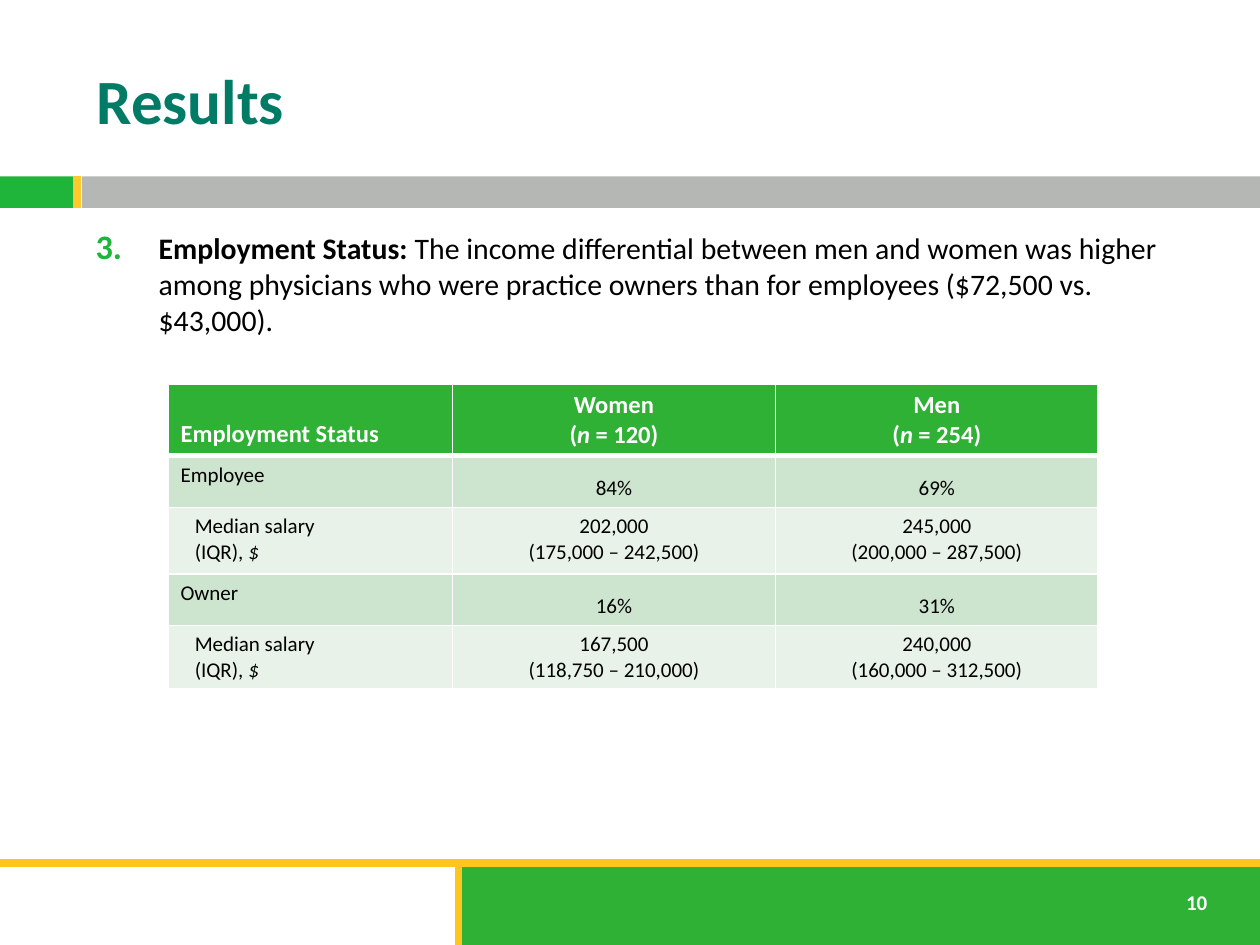
from lxml import etree
from pptx import Presentation
from pptx.dml.color import RGBColor
from pptx.enum.shapes import MSO_CONNECTOR, MSO_SHAPE
from pptx.enum.text import MSO_ANCHOR, PP_ALIGN
from pptx.oxml.ns import qn
from pptx.util import Pt

TOP, MIDDLE, BOTTOM = MSO_ANCHOR.TOP, MSO_ANCHOR.MIDDLE, MSO_ANCHOR.BOTTOM
LEFT, CENTER, RIGHT = PP_ALIGN.LEFT, PP_ALIGN.CENTER, PP_ALIGN.RIGHT
GREEN, WHITE, BLACK = "2EB135", "FFFFFF", "000000"


def paint(target, color):
    target.solid()
    target.fore_color.rgb = RGBColor.from_string(color)


def write(para, text, size=12, color=BLACK, bold=False, italic=False, align=LEFT):
    para.alignment = align
    span = para.add_run()
    span.text = text
    font = span.font
    font.name, font.size, font.bold, font.italic = "Calibri", Pt(size), bold, italic
    paint(font.fill, color)


deck = Presentation()
deck.slide_width, deck.slide_height = Pt(720), Pt(540)
page = deck.slides.add_slide(deck.slide_layouts[5])
paint(page.background.fill, WHITE)

bands = [
    (0, 100.8, 41.8, 18, "1EB53A"),
    (46.8, 100.8, 673.2, 18, "B5B7B4"),
    (260.6, 492.5, 459.4, 47.5, GREEN),
]
for left, top, width, height, color in bands:
    band = page.shapes.add_shape(MSO_SHAPE.RECTANGLE, Pt(left), Pt(top), Pt(width), Pt(height))
    band.shadow.inherit = False
    paint(band.fill, color)
    band.line.fill.background()

rules = [
    (0, 493, 720, 493, "FFC61E"),
    (262, 494, 262, 540, "FFC61E"),
    (44.2, 100.8, 44.2, 118.8, "FFC82E"),
]
for x1, y1, x2, y2, color in rules:
    rule = page.shapes.add_connector(MSO_CONNECTOR.STRAIGHT, Pt(x1), Pt(y1), Pt(x2), Pt(y2))
    rule.line.width = Pt(4.5)
    paint(rule.line.fill, color)
    etree.SubElement(rule._element.spPr, qn("a:effectLst"))

title = page.shapes.title
title.left, title.top, title.width, title.height = Pt(48), Pt(18), Pt(642), Pt(78)
title.text_frame.vertical_anchor = MIDDLE
write(title.text_frame.paragraphs[0], "Results", size=36, color="007C66", bold=True)

number_box = page.shapes.add_textbox(Pt(668), Pt(505), Pt(29), Pt(22))
number_box.text_frame.word_wrap = False
write(number_box.text_frame.paragraphs[0], "10", color=WHITE, bold=True, align=RIGHT)

finding_box = page.shapes.add_textbox(Pt(47.6), Pt(128), Pt(642), Pt(104))
finding_box.text_frame.word_wrap = True
finding = finding_box.text_frame.paragraphs[0]
properties = finding._p.get_or_add_pPr()
properties.set("marL", str(Pt(36)))
properties.set("indent", str(-Pt(36)))
bullet_color = etree.SubElement(properties, qn("a:buClr"))
etree.SubElement(bullet_color, qn("a:srgbClr"), val="1EB53A")
etree.SubElement(properties, qn("a:buSzPct"), val="115000")
etree.SubElement(properties, qn("a:buFont"), typeface="Calibri")
etree.SubElement(properties, qn("a:buAutoNum"), type="arabicPeriod", startAt="3")
write(finding, "Employment Status: ", size=17, bold=True)
write(finding, "The income differential between men and women was higher among physicians "
      "who were practice owners than for employees ($72,500 vs. $43,000).", size=17)

rows = [
    ["Employment Status", "Women\n(|n| = 120)", "Men\n(|n| = 254)"],
    ["Employee", "84%", "69%"],
    ["Median salary\n(IQR), |$", "202,000\n(175,000 – 242,500)", "245,000\n(200,000 – 287,500)"],
    ["Owner", "16%", "31%"],
    ["Median salary\n(IQR), |$", "167,500\n(118,750 – 210,000)", "240,000\n(160,000 – 312,500)"],
]
row_heights = [29.5, 29.5, 38, 29.5, 29.5]
column_widths = [162.6, 184.5, 184.5]
row_fills = [GREEN, "CDE4CE", "E8F2E8", "CDE4CE", "E8F2E8"]
table = page.shapes.add_table(5, 3, Pt(96), Pt(219.6), Pt(sum(column_widths)),
                              Pt(sum(row_heights))).table
for column, width in zip(table.columns, column_widths):
    column.width = Pt(width)
for r, texts in enumerate(rows):
    table.rows[r].height = Pt(row_heights[r])
    header = r == 0
    share_row = r in (1, 3)
    for c, text in enumerate(texts):
        cell = table.cell(r, c)
        label = c == 0
        cell.vertical_anchor = BOTTOM if header == label and (header or share_row) else TOP
        if label and not header and not share_row:
            cell.margin_left = Pt(15.3)
        widths = {"lnL": 1, "lnR": 1, "lnT": 3 if r == 1 else 1, "lnB": 3 if header else 1}
        for side, width in widths.items():
            border = etree.SubElement(cell._tc.get_or_add_tcPr(), qn("a:" + side), w=str(Pt(width)))
            border_fill = etree.SubElement(border, qn("a:solidFill"))
            etree.SubElement(border_fill, qn("a:srgbClr"), val=WHITE)
        paint(cell.fill, row_fills[r])
        for i, line in enumerate(text.split("\n")):
            para = cell.text_frame.add_paragraph() if i else cell.text_frame.paragraphs[0]
            for k, part in enumerate(line.split("|")):
                write(para, part, size=14 if header else 12, color=WHITE if header else BLACK,
                      bold=header, italic=k == 1, align=LEFT if label else CENTER)

deck.save("out.pptx")
